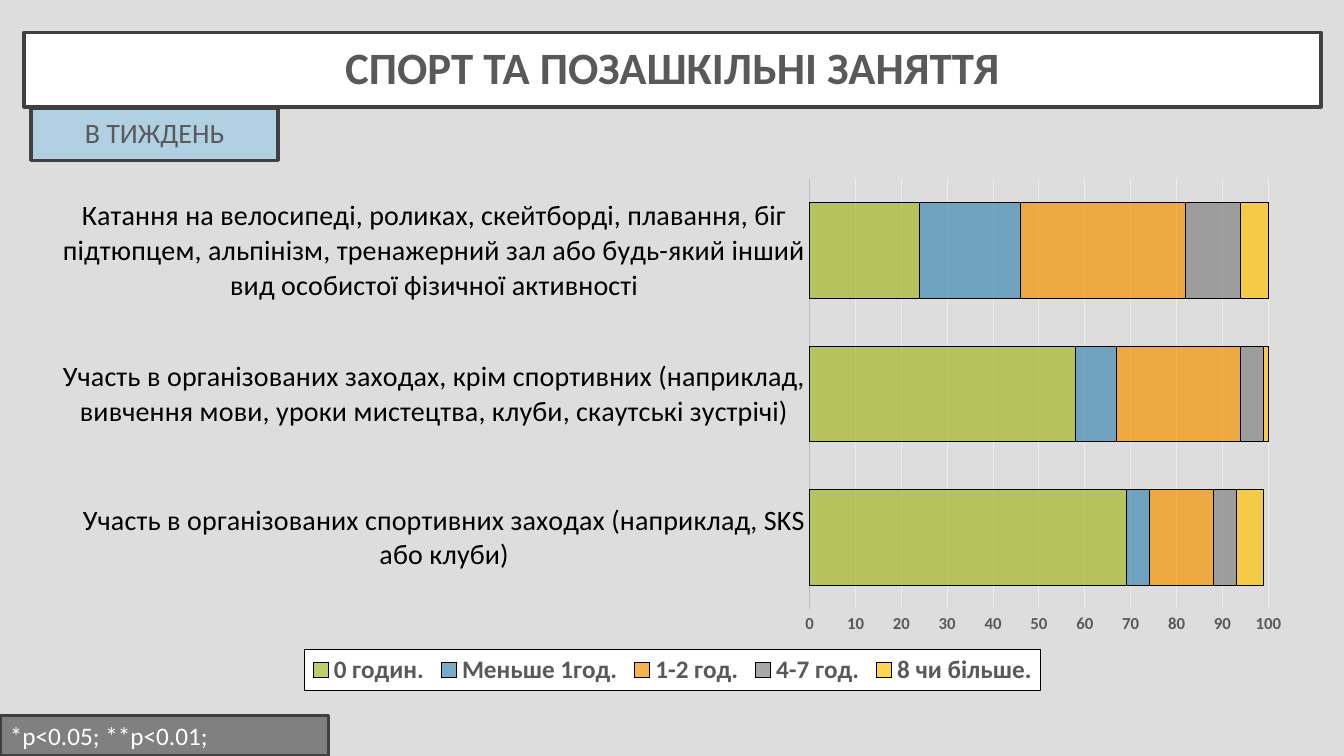
from lxml.etree import SubElement
from pptx import Presentation
from pptx.chart.data import CategoryChartData
from pptx.dml.color import RGBColor
from pptx.enum.chart import XL_CHART_TYPE, XL_LEGEND_POSITION, XL_TICK_MARK
from pptx.enum.shapes import MSO_SHAPE
from pptx.enum.text import MSO_ANCHOR, PP_ALIGN
from pptx.oxml import parse_xml
from pptx.oxml.ns import nsdecls, qn
from pptx.util import Inches, Pt

FONT = "Calibri"
COLORS = {
    "background": "DDDDDD", "white": "FFFFFF", "frame": "404040",
    "text": "595959", "black": "000000", "tab": "B1D1E3",
    "note": "808080", "axis": "BFBFBF", "grid": "EDEDED",
}
CATEGORIES = [
    "Участь в організованих спортивних заходах (наприклад, SKS або клуби)",
    "Участь в організованих заходах, крім спортивних (наприклад, "
    "вивчення мови, уроки мистецтва, клуби, скаутські зустрічі)",
    "Катання на велосипеді, роликах, скейтборді, плавання, біг підтюпцем, "
    "альпінізм, тренажерний зал або будь-який інший вид особистої "
    "фізичної активності",
]
SERIES = [
    ("0 годин.", (69, 58, 24), "A6B727"),
    ("Меньше 1год.", (5, 9, 22), "418AB3"),
    ("1-2 год.", (14, 27, 36), "F69200"),
    ("4-7 год.", (5, 5, 12), "838383"),
    ("8 чи більше.", (6, 2, 7), "FEC306"),
]


def rgb(name):
    return RGBColor.from_string(COLORS.get(name, name))


def set_fill(fill, color):
    fill.solid()
    fill.fore_color.rgb = rgb(color)


def set_line(line, color, width):
    set_fill(line.fill, color)
    line.width = Pt(width)


def set_font(font, size, color, bold=False):
    font.name = FONT
    font.size = Pt(size)
    font.bold = bold
    font.color.rgb = rgb(color)


def place(sp, box):
    sp.left, sp.top, sp.width, sp.height = map(Inches, box)


def add_panel(s, box, fill):
    sp = s.shapes.add_shape(MSO_SHAPE.RECTANGLE, *map(Inches, box))
    sp.shadow.inherit = False
    set_fill(sp.fill, fill)
    set_line(sp.line, "frame", 2.5)
    return sp


def write_heading(sp, text, size, bold=False):
    tf = sp.text_frame
    tf.word_wrap = True
    tf.vertical_anchor = MSO_ANCHOR.MIDDLE
    tf.margin_left = tf.margin_right = Inches(0.2)
    tf.margin_top = tf.margin_bottom = Inches(0.2)
    p = tf.paragraphs[0]
    p.alignment = PP_ALIGN.CENTER
    p.line_spacing = 0.9
    r = p.add_run()
    r.text = text
    set_font(r.font, size, "text", bold)


def add_title(s, box):
    title = s.shapes.title
    place(title, box)
    set_fill(title.fill, "white")
    set_line(title.line, "frame", 2.5)
    write_heading(title, "СПОРТ ТА ПОЗАШКІЛЬНІ ЗАНЯТТЯ", 32, True)


def add_tab(s, box):
    write_heading(add_panel(s, box, "tab"), "В ТИЖДЕНЬ", 20)


def set_layout(parent, position, shares, inner=False):
    for old in parent.findall(qn("c:layout")):
        parent.remove(old)
    layout = parse_xml(f"<c:layout {nsdecls('c')}><c:manualLayout/></c:layout>")
    settings = [("layoutTarget", "inner")] if inner else []
    settings += [("xMode", "edge"), ("yMode", "edge"), *zip("xywh", shares)]
    for tag, value in settings:
        SubElement(layout[0], qn(f"c:{tag}")).set("val", str(value))
    parent.insert(position, layout)


def style_axes(chart):
    categories, values = chart.category_axis, chart.value_axis
    for axis in (categories, values):
        axis.major_tick_mark = axis.minor_tick_mark = XL_TICK_MARK.NONE
    set_font(categories.tick_labels.font, 20, "black")
    set_line(categories.format.line, "axis", 0.75)
    set_font(values.tick_labels.font, 12, "text", True)
    values.format.line.fill.background()
    values.minimum_scale, values.maximum_scale = 0, 100
    values.major_unit = 10
    set_line(values.major_gridlines.format.line, "grid", 0.75)


def style_legend(chart):
    chart.has_legend = True
    legend = chart.legend
    legend.position = XL_LEGEND_POSITION.BOTTOM
    legend.include_in_layout = False
    set_font(legend.font, 18, "text", True)
    element = chart.element.find(f".//{qn('c:legend')}")
    set_layout(element, 1, (0.21, 0.92, 0.58, 0.08))
    element.find(qn("c:overlay")).addnext(parse_xml(
        f"<c:spPr {nsdecls('c', 'a')}><a:solidFill>"
        f"<a:srgbClr val=\"{COLORS['white']}\"/></a:solidFill>"
        f"<a:ln w=\"9525\"><a:solidFill><a:srgbClr val=\"{COLORS['black']}\"/>"
        "</a:solidFill></a:ln></c:spPr>"))


def add_hours_chart(s, box):
    data = CategoryChartData()
    data.categories = CATEGORIES
    for name, values, _ in SERIES:
        data.add_series(name, values)
    chart = s.shapes.add_chart(
        XL_CHART_TYPE.BAR_STACKED, *map(Inches, box), data).chart
    chart.has_title = False
    set_font(chart.font, 10, "black")
    plot = chart.plots[0]
    plot.gap_width, plot.overlap = 50, 100
    plot.vary_by_categories = False
    for series, (_, _, color) in zip(plot.series, SERIES):
        set_fill(series.format.fill, color)
        set_line(series.format.line, "black", 0.75)
        fill_color = series.format.fill._xPr.find(
            f"{qn('a:solidFill')}/{qn('a:srgbClr')}")
        SubElement(fill_color, qn("a:alpha")).set("val", "70000")
    style_axes(chart)
    style_legend(chart)
    plot_area = chart.element.find(f".//{qn('c:plotArea')}")
    set_layout(plot_area, 0, (0.608, 0.02, 0.361, 0.824), inner=True)


def add_note(s, box):
    add_panel(s, box, "note")
    tf = s.shapes.add_textbox(*map(Inches, box)).text_frame
    tf.word_wrap = True
    r = tf.paragraphs[0].add_run()
    r.text = "*p<0.05; **p<0.01;"
    set_font(r.font, 18, "white")


def main():
    prs = Presentation()
    prs.slide_width, prs.slide_height = Inches(13.33), Inches(7.5)
    s = prs.slides.add_slide(prs.slide_layouts[5])
    set_fill(s.background.fill, "background")
    add_title(s, (0.24, 0.32, 12.86, 0.74))
    add_hours_chart(s, (0.37, 1.67, 12.6, 5.19))
    add_tab(s, (0.31, 1.07, 2.45, 0.52))
    add_note(s, (0, 7.1, 3.26, 0.4))
    prs.save("out.pptx")


if __name__ == "__main__":
    main()
